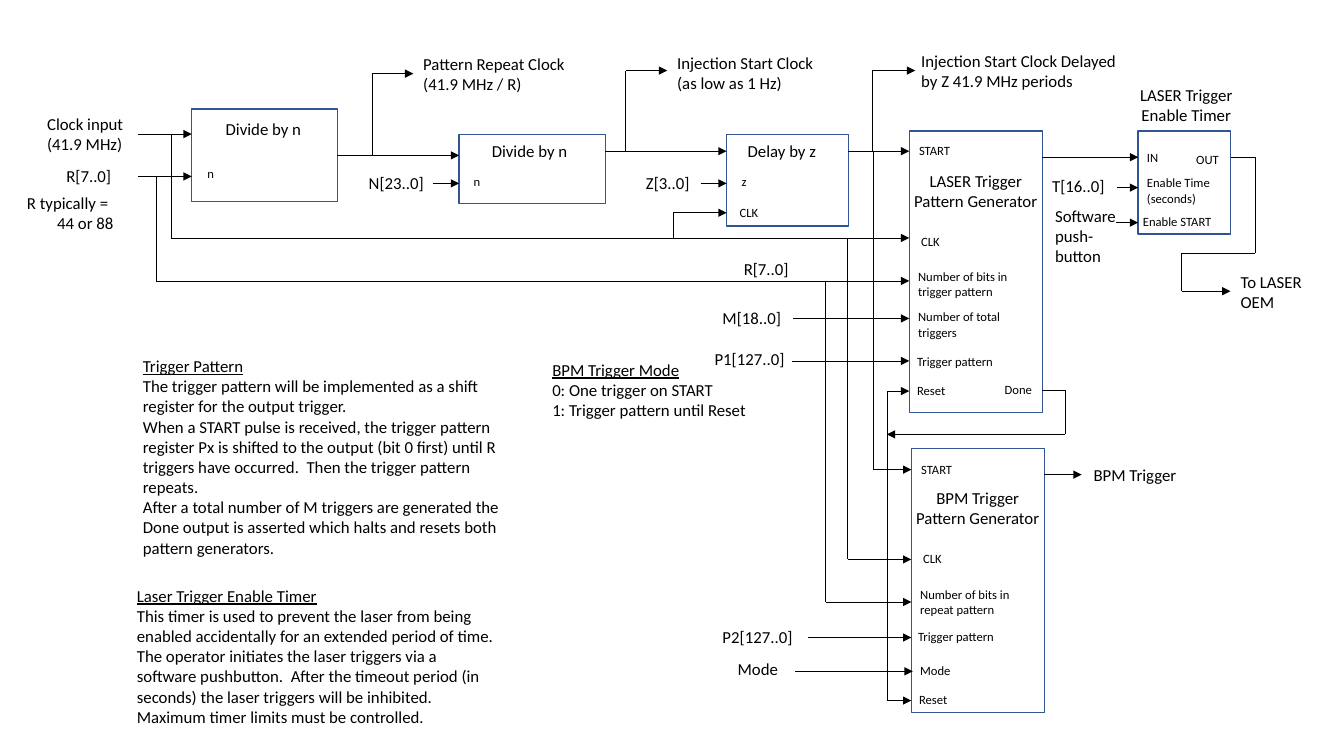
from itertools import pairwise
from lxml import etree
from pptx import Presentation
from pptx import util as u
from pptx.dml.color import RGBColor
from pptx.enum import shapes, text
from pptx.oxml import ns

BLACK = RGBColor(0x00, 0x00, 0x00)
BLUE = RGBColor(0x32, 0x54, 0x91)


class Board:
    font = "Calibri"

    def __init__(self, slide):
        self.items = slide.shapes

    def box(self, x, y, w, h):
        rect = self.items.add_shape(
            shapes.MSO_SHAPE.RECTANGLE, u.Pt(x), u.Pt(y), u.Pt(w), u.Pt(h))
        rect.shadow.inherit = False
        rect.fill.background()
        rect.line.color.rgb = BLUE
        rect.line.width = u.Pt(1)
        return rect

    def wire(self, *points, start=None):
        for (x1, y1), (x2, y2) in pairwise(points):
            line = self.items.add_connector(
                shapes.MSO_CONNECTOR.STRAIGHT, u.Pt(x1), u.Pt(y1), u.Pt(x2), u.Pt(y2))
            line.line.color.rgb = BLACK
            line.line.width = u.Pt(0.5)
            etree.SubElement(line._element.spPr, ns.qn("a:effectLst"))
            if start is not None:
                line.begin_connect(start, 3)
        tip = etree.SubElement(line.line._get_or_add_ln(), ns.qn("a:tailEnd"))
        tip.set("type", "triangle")

    def label(self, x, y, w, words, rows=1, size=12, center=False, title=False, indent=0):
        area = self.items.add_textbox(
            u.Pt(x), u.Pt(y), u.Pt(w), u.Pt(7.2 + 1.2 * size * rows))
        frame = area.text_frame
        frame.word_wrap = True
        frame.auto_size = text.MSO_AUTO_SIZE.SHAPE_TO_FIT_TEXT
        for i, part in enumerate(words.split("\n")):
            para = frame.add_paragraph() if i else frame.paragraphs[0]
            if center:
                para.alignment = text.PP_ALIGN.CENTER
            if i and indent:
                para._p.get_or_add_pPr().set("marL", str(u.Pt(indent)))
            run = para.add_run()
            run.text = part
            run.font.name = self.font
            run.font.size = u.Pt(size)
            run.font.color.rgb = BLACK
            if title and i == 0:
                run.font.underline = True


NAMES = [
    (26.6, 77.8, 72, "Clock input\n(41.9 MHz)", 2),
    (40.3, 115.2, 72, "R[7..0]", 1),
    (295.2, 34.6, 116.6, "Pattern Repeat Clock\n(41.9 MHz / R)", 2),
    (154.1, 81.4, 72, "Divide by n", 1),
    (344.2, 97.2, 72, "Divide by n", 1),
    (527, 97.2, 72, "Delay by z", 1),
    (256.3, 120.2, 54, "N[23..0]", 1),
    (454.3, 120.2, 54, "Z[3..0]", 1),
    (476.6, 33.8, 116.6, "Injection Start Clock\n(as low as 1 Hz)", 2),
    (650.9, 32.4, 157, "Injection Start Clock Delayed\nby Z 41.9 MHz periods", 2),
    (524.2, 181.4, 53.3, "R[7..0]", 1),
    (509, 216, 61.9, "M[18..0]", 1),
    (503.3, 245.5, 70.6, "P1[127..0]", 1),
    (509, 444.2, 70.6, "P2[127..0]", 1),
    (519.8, 467.3, 59.8, "Mode", 1),
    (774, 328.3, 95, "BPM Trigger", 1),
    (879.1, 190.8, 61.9, "To LASER\nOEM", 2),
    (744.5, 121.7, 61.9, "T[16..0]", 1),
    (746.6, 143.3, 62.6, "Software\npush-button", 3),
]

HEADS = [
    (639.4, 118.1, "LASER Trigger Pattern Generator"),
    (640.8, 344.9, "BPM Trigger\nPattern Generator"),
    (789.8, 56.9, "LASER Trigger Enable Timer"),
]

PINS = [
    (141.1, 115.2, 25.2, "n", 1),
    (331.2, 121, 25.2, "n", 1),
    (522.7, 121, 25.2, "z", 1),
    (521.3, 142.6, 31.7, "CLK", 1),
    (649.4, 98.6, 43.2, "START", 1),
    (650.9, 163.4, 31.7, "CLK", 1),
    (648.7, 188.6, 82.1, "Number of bits in trigger pattern", 2),
    (648.7, 217.4, 82.1, "Number of total triggers", 2),
    (648, 249.1, 82.1, "Trigger pattern", 1),
    (648, 270, 38.2, "Reset", 1),
    (710.6, 269.3, 38.2, "Done", 1),
    (650.9, 326.2, 43.2, "START", 1),
    (652.3, 390.2, 31.7, "CLK", 1),
    (650.2, 415.4, 82.1, "Number of bits in repeat pattern", 2),
    (648.7, 445.7, 82.1, "Trigger pattern", 1),
    (650.2, 470.2, 38.2, "Mode", 1),
    (649.4, 491, 38.2, "Reset", 1),
    (812.2, 103.7, 31.7, "IN", 1),
    (847.4, 105.1, 31.7, "OUT", 1),
    (812.2, 121.7, 61.9, "Enable Time (seconds)", 2),
    (809.3, 149, 66.2, "Enable START", 1),
]

NOTES = [
    (387.4, 253.4, 161.3, "BPM Trigger Mode\n0: One trigger on START\n"
     "1: Trigger pattern until Reset", 3),
    (95, 250.6, 269.3, "Trigger Pattern\n"
     "The trigger pattern will be implemented as a shift register for the output trigger.\n"
     "When a START pulse is received, the trigger pattern register Px is shifted to the "
     "output (bit 0 first) until R triggers have occurred.  Then the trigger pattern repeats.\n"
     "After a total number of M triggers are generated the Done output is asserted which "
     "halts and resets both pattern generators.", 10),
    (90.7, 414.7, 273.6, "Laser Trigger Enable Timer\n"
     "This timer is used to prevent the laser from being enabled accidentally for an "
     "extended period of time.  The operator initiates the laser triggers via a software "
     "pushbutton.  After the timeout period (in seconds) the laser triggers will be "
     "inhibited.  Maximum timer limits must be controlled.", 7),
]

INPUTS = [
    (98.6, 137, 95.8), (98.6, 137, 126), (309, 328, 131), (432.5, 519, 108),
    (500.4, 519, 131), (606, 649.5, 108), (566.6, 649.5, 227.5), (566, 649.5, 257.8),
    (744.5, 813, 112.3), (746, 772.6, 339), (577.4, 651, 455.4), (568, 652, 479.5),
    (633.5, 649.5, 279.3), (797.8, 813, 134), (797, 813, 159),
]

TAPS = [
    (265.7, 111, 52.6, 295.2), (447, 108, 50.4, 476.6), (623, 108, 50.4, 653.8),
    (122.4, 95.8, 170, 649.5), (481, 170, 152, 519), (111.6, 126, 200.7, 649.5),
    (589.7, 200.7, 430, 651), (605.5, 170, 399.6, 651), (623.8, 108, 335.5, 651),
    (633.5, 279.3, 500.4, 651),
]


def main():
    deck = Presentation()
    deck.slide_width, deck.slide_height = u.Pt(960), u.Pt(540)
    board = Board(deck.slides.add_slide(deck.slide_layouts[6]))

    first = board.box(137, 78, 104, 66)
    for spot in [(328, 96, 104.5, 49.5), (519, 96, 87, 65.5), (649.5, 93.6, 95, 201),
                 (651, 320.4, 95, 188.6), (813, 93.6, 66, 73.5)]:
        board.box(*spot)

    board.wire((241, 111), (328, 111), start=first)
    for left, right, y in INPUTS:
        board.wire((left, y), (right, y))
    for x, top, y, end in TAPS:
        board.wire((x, top), (x, y), (end, y))
    board.wire((744.5, 278.6), (760.7, 278.6), (760.7, 310.3), (633.5, 310.3))
    board.wire((879, 112.3), (896.4, 112.3), (896.4, 181), (844, 181),
               (844, 208), (879, 208))

    for name in NAMES:
        board.label(*name)
    board.label(12.2, 133.9, 80.6, "R typically =\n44 or 88", rows=2, indent=21.6)
    for x, y, words in HEADS:
        board.label(x, y, 115.2, words, rows=2, center=True)
    for pin in PINS:
        board.label(*pin, size=9)
    for note in NOTES:
        board.label(*note, title=True)

    deck.save("out.pptx")


if __name__ == "__main__":
    main()
